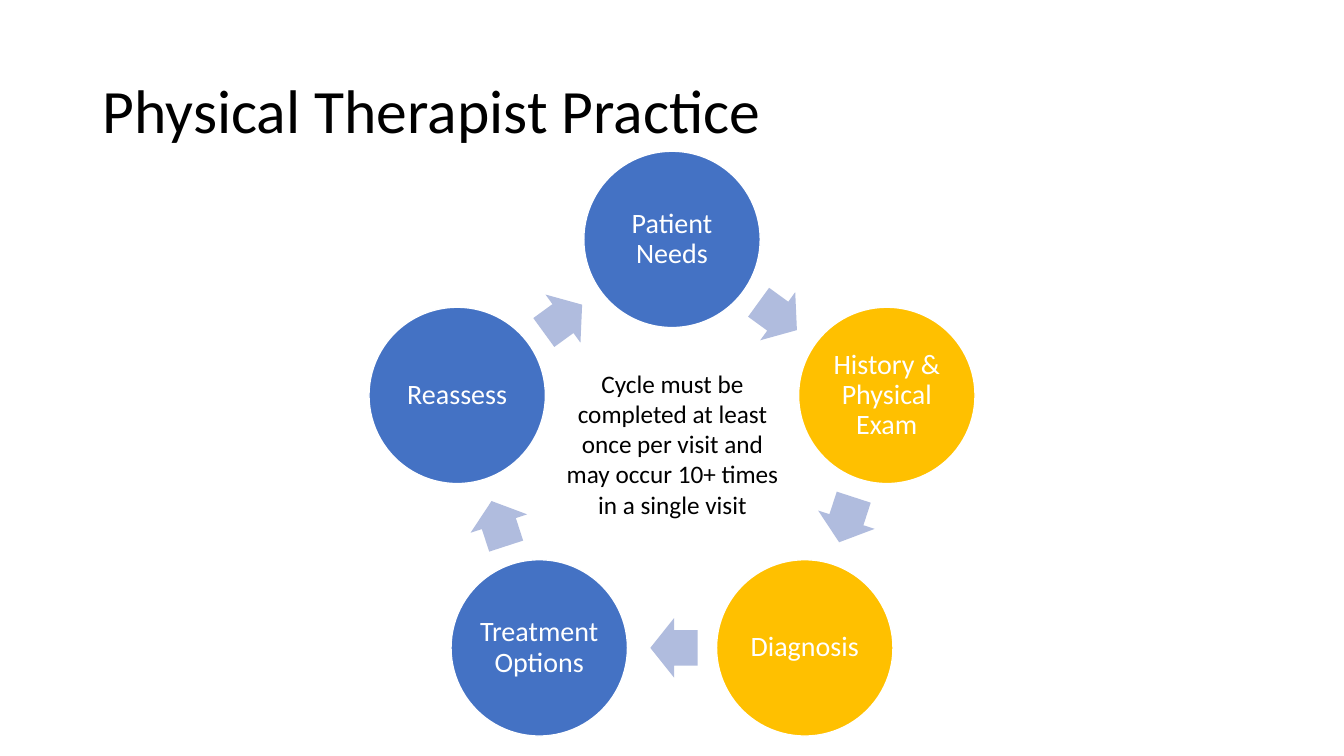
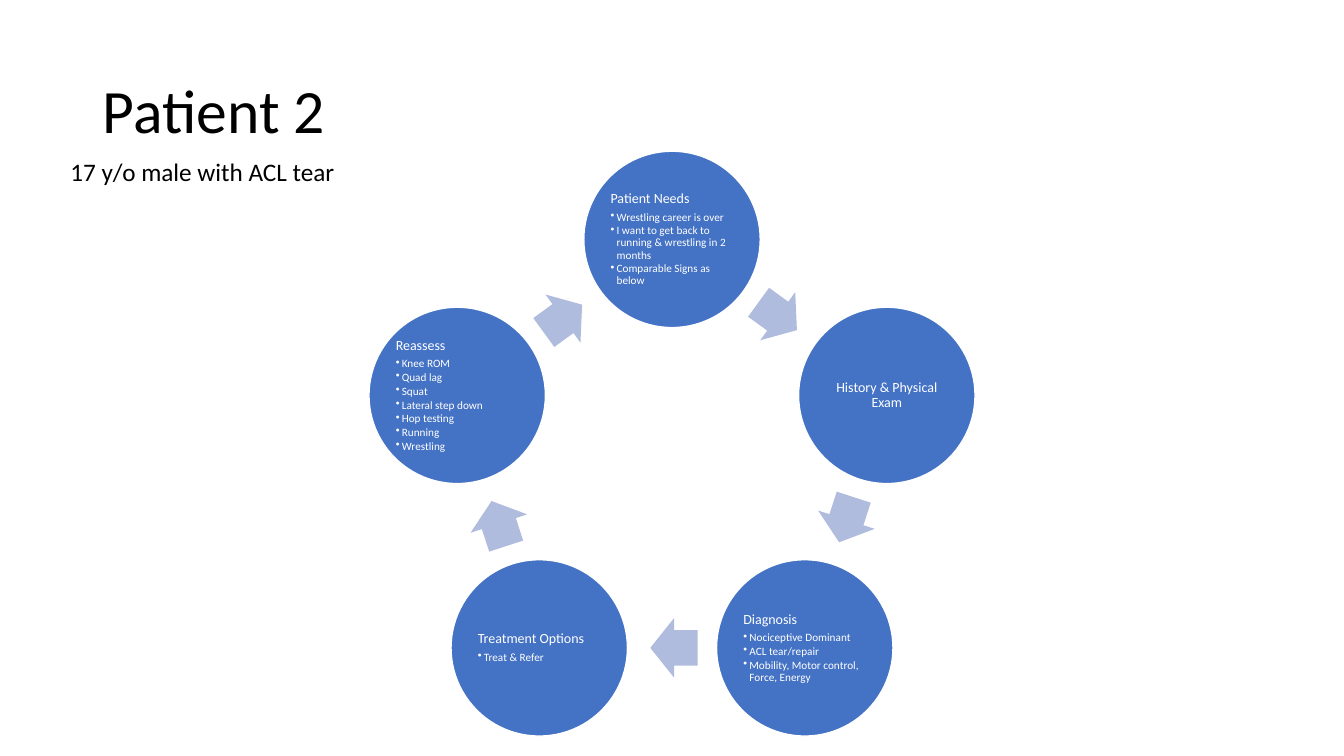
"""Build two slides showing the physical therapy cycle of care."""
import math

import lxml.etree
import pptx
import pptx.dml.color
import pptx.enum.shapes
import pptx.enum.text
import pptx.oxml.ns
import pptx.util

Inches = pptx.util.Inches
Pt = pptx.util.Pt
ALIGN = pptx.enum.text.PP_ALIGN
SHAPE = pptx.enum.shapes.MSO_SHAPE
MIDDLE = pptx.enum.text.MSO_ANCHOR.MIDDLE

COLORS = {name: pptx.dml.color.RGBColor.from_string(value) for name, value in {
    "blue": "4472C4", "gold": "FFC000", "arrow": "B0BCDE",
    "white": "FFFFFF", "black": "000000"}.items()}
CENTER_X, CENTER_Y, RADIUS = 6.665, 4.615, 2.24
CIRCLE_SIZE = 1.75
ARROW_WIDTH, ARROW_HEIGHT, ARROW_SETBACK = 0.47, 0.59, 0.02

SLIDES = [
    {
        "title": "Physical Therapist Practice",
        "heading_size": 20, "inset": 0.03,
        "steps": [("Patient Needs", "blue", []),
                  ("History & Physical Exam", "gold", []),
                  ("Diagnosis", "gold", []),
                  ("Treatment Options", "blue", []),
                  ("Reassess", "blue", [])],
        "caption": "Cycle must be completed at least once per visit "
                   "and may occur 10+ times in a single visit",
        "caption_box": (5.44, 3.6, 2.46, 1.62), "caption_align": ALIGN.CENTER,
    },
    {
        "title": "Patient 2",
        "heading_size": 10, "inset": 0.01,
        "steps": [("Patient Needs", "blue",
                   ["Wrestling career is over",
                    "I want to get back to running & wrestling in 2 months",
                    "Comparable Signs as below"]),
                  ("History & Physical Exam", "blue", []),
                  ("Diagnosis", "blue",
                   ["Nociceptive Dominant", "ACL tear/repair",
                    "Mobility, Motor control, Force, Energy"]),
                  ("Treatment Options", "blue", ["Treat & Refer"]),
                  ("Reassess", "blue",
                   ["Knee ROM", "Quad lag", "Squat", "Lateral step down",
                    "Hop testing", "Running", "Wrestling"])],
        "caption": "17 y/o male with ACL tear",
        "caption_box": (0.6, 1.5, 6.67, 0.4), "caption_align": ALIGN.LEFT,
    },
]


def write_paragraph(paragraph, text, size, color, alignment, line_spacing=0.9):
    paragraph.text = text
    paragraph.alignment = alignment
    paragraph.line_spacing = line_spacing
    font = paragraph.runs[0].font
    font.name = "Calibri"
    font.size = Pt(size)
    font.color.rgb = COLORS[color]


def add_centered_shape(slide, kind, x, y, width, height, color):
    shape = slide.shapes.add_shape(kind, Inches(x - width / 2), Inches(y - height / 2),
                                   Inches(width), Inches(height))
    shape.shadow.inherit = False
    shape.fill.solid()
    shape.fill.fore_color.rgb = COLORS[color]
    shape.line.fill.background()
    return shape


presentation = pptx.Presentation()
presentation.slide_width = Inches(13.33)
presentation.slide_height = Inches(7.5)
layout = presentation.slide_layouts[5]

centers = []
for index in range(5):
    angle = math.radians(72 * index - 90)
    centers.append((CENTER_X + RADIUS * math.cos(angle),
                    CENTER_Y + RADIUS * math.sin(angle)))

for content in SLIDES:
    slide = presentation.slides.add_slide(layout)
    title = slide.shapes.title
    title.left, title.top = Inches(0.92), Inches(0.4)
    title.width, title.height = Inches(11.5), Inches(1.45)
    title.text_frame.vertical_anchor = MIDDLE
    title.text_frame.auto_size = pptx.enum.text.MSO_AUTO_SIZE.NONE
    write_paragraph(title.text_frame.paragraphs[0], content["title"], 44, "black", ALIGN.LEFT)

    for index, (heading, color, details) in enumerate(content["steps"]):
        x, y = centers[index]
        circle = add_centered_shape(slide, SHAPE.OVAL, x, y, CIRCLE_SIZE, CIRCLE_SIZE, color)
        circle.line.color.rgb = COLORS["white"]
        circle.line.width = Pt(1)
        frame = circle.text_frame
        frame.word_wrap = True
        frame.vertical_anchor = MIDDLE
        frame.margin_left = frame.margin_right = Inches(content["inset"])
        frame.margin_top = frame.margin_bottom = Inches(content["inset"])
        write_paragraph(frame.paragraphs[0], heading, content["heading_size"], "white",
                        ALIGN.LEFT if details else ALIGN.CENTER)
        if details:
            frame.paragraphs[0].space_after = Pt(3.5)
        for detail in details:
            paragraph = frame.add_paragraph()
            write_paragraph(paragraph, detail, 8, "white", ALIGN.LEFT)
            paragraph.level = 1
            paragraph.space_after = Pt(1.2)
            properties = paragraph._p.get_or_add_pPr()
            properties.set("marL", str(Inches(0.06)))
            properties.set("indent", str(Inches(-0.06)))
            bullet = lxml.etree.SubElement(properties, pptx.oxml.ns.qn("a:buChar"))
            bullet.set("char", "•")

        next_x, next_y = centers[(index + 1) % 5]
        rotation = 36 + 72 * index
        direction = math.radians(rotation)
        arrow = add_centered_shape(
            slide, SHAPE.RIGHT_ARROW,
            (x + next_x) / 2 - ARROW_SETBACK * math.cos(direction),
            (y + next_y) / 2 - ARROW_SETBACK * math.sin(direction),
            ARROW_WIDTH, ARROW_HEIGHT, "arrow")
        arrow.adjustments[0] = 0.6
        arrow.adjustments[1] = 0.5
        arrow.rotation = rotation

    caption = slide.shapes.add_textbox(*map(Inches, content["caption_box"]))
    caption.text_frame.word_wrap = True
    write_paragraph(caption.text_frame.paragraphs[0], content["caption"], 18, "black",
                    content["caption_align"], 1.0)

presentation.save("out.pptx")
